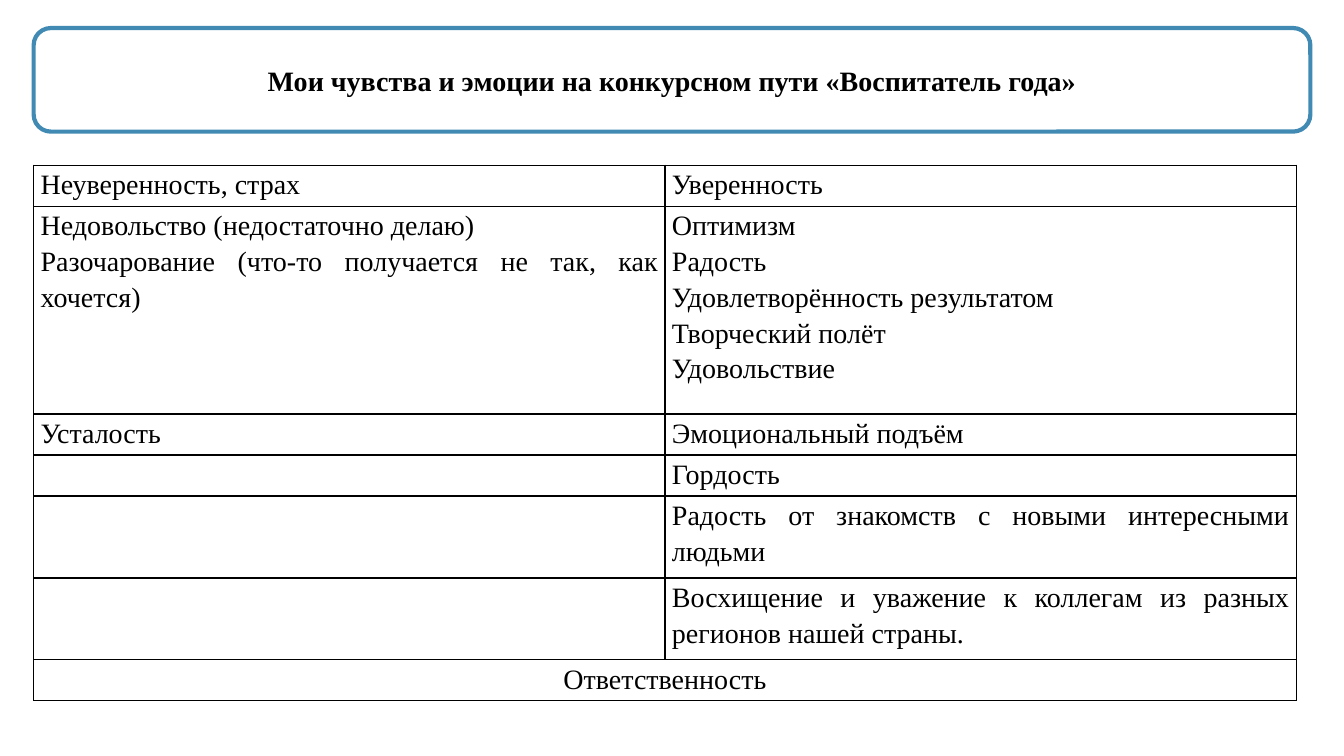
import pptx
import pptx.dml.color
import pptx.enum.shapes
import pptx.enum.text
import pptx.oxml
import pptx.oxml.ns
import pptx.util

Pt = pptx.util.Pt
ALIGN = pptx.enum.text.PP_ALIGN
MIDDLE = pptx.enum.text.MSO_ANCHOR.MIDDLE

FONT = "Times New Roman"
BLACK, WHITE, BLUE = "000000", "FFFFFF", "418AB3"
LEFT = 24
COLUMN_WIDTH = 451
SHORT_ROW, TWO_LINE_ROW, LIST_ROW = 29.3, 58.5, 148.5

HEADING = "Мои чувства и эмоции на конкурсном пути «Воспитатель года»"
# Row height, difficult feelings, positive feelings
FEELINGS = [
    (SHORT_ROW, "Неуверенность, страх", "Уверенность"),
    (LIST_ROW,
     "Недовольство (недостаточно делаю)\n"
     "Разочарование (что-то получается не так, как хочется)",
     "Оптимизм\nРадость\nУдовлетворённость результатом\n"
     "Творческий полёт\nУдовольствие"),
    (SHORT_ROW, "Усталость", "Эмоциональный подъём"),
    (SHORT_ROW, "", "Гордость"),
    (TWO_LINE_ROW, "", "Радость от знакомств с новыми интересными людьми"),
    (TWO_LINE_ROW, "",
     "Восхищение и уважение к коллегам из разных регионов нашей страны."),
]
SHARED_FEELING = "Ответственность"


def color(hex_value):
    return pptx.dml.color.RGBColor.from_string(hex_value)


def write(frame, text, align, bold=False, line_spacing=None):
    frame.text = text
    for paragraph in frame.paragraphs:
        paragraph.alignment = align
        paragraph.line_spacing = line_spacing
        for run in paragraph.runs:
            run.font.name = FONT
            run.font.size = Pt(20)
            run.font.bold = bold
            run.font.color.rgb = color(BLACK)


def add_borders(cell):
    properties = cell._tc.get_or_add_tcPr()
    for side in ("lnL", "lnR", "lnT", "lnB"):
        properties.append(pptx.oxml.parse_xml(
            f'<a:{side} {pptx.oxml.ns.nsdecls("a")} w="{Pt(1)}">'
            f'<a:solidFill><a:srgbClr val="{BLACK}"/></a:solidFill></a:{side}>'))


def add_heading(slide):
    banner = slide.shapes.add_shape(
        pptx.enum.shapes.MSO_SHAPE.ROUNDED_RECTANGLE,
        Pt(LEFT), Pt(20), Pt(912), Pt(74))
    banner.shadow.inherit = False
    banner.fill.solid()
    banner.fill.fore_color.rgb = color(WHITE)
    banner.line.color.rgb = color(BLUE)
    banner.line.width = Pt(3)
    banner.text_frame.word_wrap = True
    banner.text_frame.vertical_anchor = MIDDLE
    write(banner.text_frame, HEADING, ALIGN.CENTER, bold=True)


def add_feelings_table(slide):
    heights = [height for height, *_ in FEELINGS] + [SHORT_ROW]
    table = slide.shapes.add_table(
        len(heights), 2, Pt(LEFT), Pt(118),
        Pt(2 * COLUMN_WIDTH), Pt(sum(heights))).table
    table.first_row = table.horz_banding = False
    for column in table.columns:
        column.width = Pt(COLUMN_WIDTH)
    for row, height in zip(table.rows, heights):
        row.height = Pt(height)

    for cell in table.iter_cells():
        cell.margin_left = cell.margin_right = Pt(5)
        cell.margin_top = cell.margin_bottom = 0
        add_borders(cell)
        cell.fill.background()

    for row, (_, *texts) in zip(table.rows, FEELINGS):
        for cell, text in zip(row.cells, texts):
            write(cell.text_frame, text, ALIGN.JUSTIFY, line_spacing=1.15)

    last = len(heights) - 1
    shared = table.cell(last, 0)
    shared.merge(table.cell(last, 1))
    write(shared.text_frame, SHARED_FEELING, ALIGN.CENTER, line_spacing=1.15)


def main():
    presentation = pptx.Presentation()
    presentation.slide_width = Pt(960)
    presentation.slide_height = Pt(540)
    slide = presentation.slides.add_slide(presentation.slide_layouts[6])
    add_feelings_table(slide)
    add_heading(slide)
    presentation.save("out.pptx")


if __name__ == "__main__":
    main()
